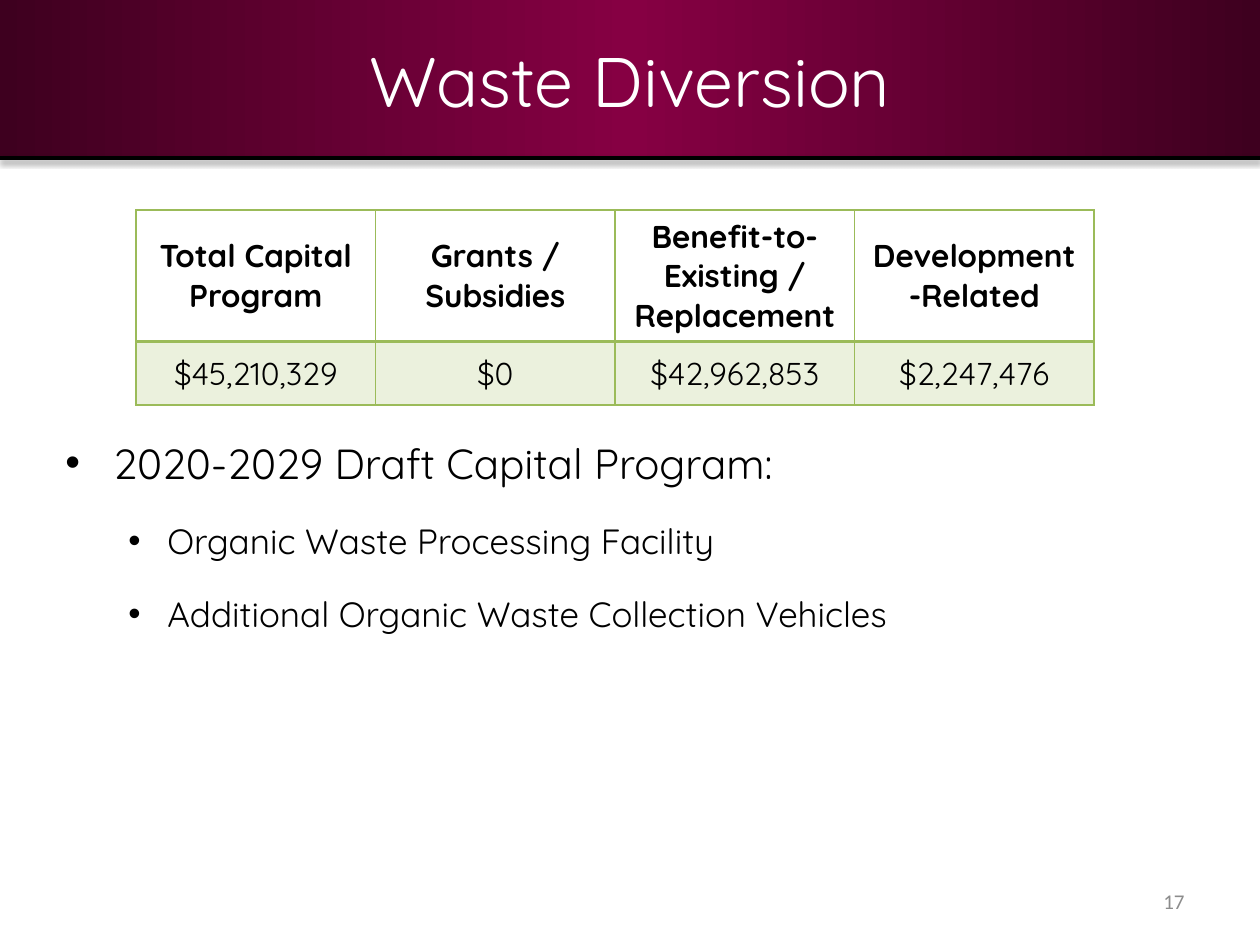
from dataclasses import dataclass

import lxml.etree
import pptx
import pptx.dml.color
import pptx.enum.shapes
import pptx.enum.text
import pptx.oxml
import pptx.oxml.ns
import pptx.util

EMU_PER_PX = 914400 / 126
ALIGN = pptx.enum.text.PP_ALIGN
MIDDLE = pptx.enum.text.MSO_ANCHOR.MIDDLE
NAMESPACE = pptx.oxml.ns.nsdecls("a")


@dataclass(frozen=True)
class Theme:
    font: str = "Quicksand"
    number_font: str = "Calibri"
    black: str = "000000"
    white: str = "FFFFFF"
    grey: str = "8C8C8C"
    green: str = "9BBB59"
    banner_edge: str = "3E001F"
    banner_centre: str = "860043"
    title_size: int = 40
    bullet_size: int = 24
    sub_bullet_size: int = 20
    table_size: int = 18
    number_size: int = 12


@dataclass(frozen=True)
class Box:
    left: int
    top: int
    width: int
    height: int

    def emu(self) -> tuple:
        return tuple(px(v) for v in (self.left, self.top, self.width, self.height))


@dataclass(frozen=True)
class Bullet:
    text: str
    level: int
    size: int
    margin: int
    hanging: int


@dataclass(frozen=True)
class Column:
    heading: str
    amount: str


THEME = Theme()
BANNER = Box(0, 0, 1260, 158)
TABLE = Box(136, 210, 958, 195)
BODY = Box(53, 431, 1144, 441)
PAGE_NUMBER = Box(903, 876, 294, 50)
ROW_HEIGHTS = (132, 63)

COLUMNS = (
    Column("Total Capital Program", "$45,210,329"),
    Column("Grants / Subsidies", "$0"),
    Column("Benefit-to-Existing / Replacement", "$42,962,853"),
    Column("Development-Related", "$2,247,476"),
)
BULLETS = (
    Bullet("2020-2029 Draft Capital Program:", 0, THEME.bullet_size, 48, 48),
    Bullet("Organic Waste Processing Facility", 1, THEME.sub_bullet_size, 102, 39),
    Bullet("Additional Organic Waste Collection Vehicles", 1, THEME.sub_bullet_size, 102, 39),
)


def px(length: float) -> pptx.util.Emu:
    return pptx.util.Emu(round(length * EMU_PER_PX))


def rgb(colour: str) -> pptx.dml.color.RGBColor:
    return pptx.dml.color.RGBColor.from_string(colour)


def format_runs(paragraph, size: int, colour: str = THEME.black,
                font: str = THEME.font, bold: bool = False) -> None:
    for run in paragraph.runs:
        run.font.name = font
        run.font.size = pptx.util.Pt(size)
        run.font.bold = bold
        run.font.color.rgb = rgb(colour)


def add_title(slide, text: str) -> None:
    title = slide.shapes.title
    title.left, title.top, title.width, title.height = BANNER.emu()
    frame = title.text_frame
    frame.text = text
    frame.vertical_anchor = MIDDLE
    frame.paragraphs[0].alignment = ALIGN.CENTER
    format_runs(frame.paragraphs[0], THEME.title_size, THEME.white)


def add_banner(slide) -> None:
    banner = slide.shapes.add_shape(
        pptx.enum.shapes.MSO_SHAPE.RECTANGLE, *BANNER.emu())
    banner.shadow.inherit = False
    banner.line.fill.background()
    edge, centre = THEME.banner_edge, THEME.banner_centre
    stops = "".join(
        f'<a:gs pos="{position}"><a:srgbClr val="{colour}"/></a:gs>'
        for position, colour in ((0, edge), (50000, centre), (100000, edge)))
    gradient = pptx.oxml.parse_xml(
        f'<a:gradFill {NAMESPACE} rotWithShape="1"><a:gsLst>{stops}</a:gsLst>'
        '<a:lin ang="0" scaled="0"/></a:gradFill>')
    banner.element.spPr.find(pptx.oxml.ns.qn("a:prstGeom")).addnext(gradient)
    # Keep the banner behind the title
    slide.shapes.title.element.addprevious(banner.element)


def add_banner_rule(slide) -> None:
    bottom = px(BANNER.height)
    rule = slide.shapes.add_connector(
        pptx.enum.shapes.MSO_CONNECTOR.STRAIGHT, 0, bottom, px(BANNER.width), bottom)
    rule.line.color.rgb = rgb(THEME.black)
    rule.line.width = pptx.util.Pt(2)
    rule.element.spPr.append(pptx.oxml.parse_xml(
        f'<a:effectLst {NAMESPACE}><a:outerShdw blurRad="40000" dist="20000" '
        f'dir="5400000" rotWithShape="0"><a:srgbClr val="{THEME.black}">'
        '<a:alpha val="38000"/></a:srgbClr></a:outerShdw></a:effectLst>'))


def set_borders(cell, widths: dict) -> None:
    properties = cell._tc.get_or_add_tcPr()
    for index, (side, points) in enumerate(widths.items()):
        properties.insert(index, pptx.oxml.parse_xml(
            f'<a:ln{side} {NAMESPACE} w="{points * 12700}"><a:solidFill>'
            f'<a:srgbClr val="{THEME.green}"/></a:solidFill></a:ln{side}>'))


def fill_cell(cell, text: str, heading: bool) -> None:
    cell.text = text
    cell.vertical_anchor = MIDDLE
    paragraph = cell.text_frame.paragraphs[0]
    paragraph.alignment = ALIGN.CENTER
    format_runs(paragraph, THEME.table_size, bold=heading)
    if heading:
        cell.fill.background()
    else:
        cell.fill.solid()
        cell.fill.fore_color.rgb = rgb(THEME.green)
        colour = cell._tc.tcPr.find(".//" + pptx.oxml.ns.qn("a:srgbClr"))
        lxml.etree.SubElement(colour, pptx.oxml.ns.qn("a:alpha"), val="20000")
    set_borders(cell, {"L": 1, "R": 1, "T": 1 if heading else 2, "B": 2 if heading else 1})


def add_cost_table(slide) -> None:
    table = slide.shapes.add_table(2, len(COLUMNS), *TABLE.emu()).table
    table.horz_banding = False
    for row, height in zip(table.rows, ROW_HEIGHTS):
        row.height = px(height)
    for index, column in enumerate(COLUMNS):
        table.columns[index].width = px(TABLE.width / len(COLUMNS))
        fill_cell(table.cell(0, index), column.heading, heading=True)
        fill_cell(table.cell(1, index), column.amount, heading=False)


def add_bullets(slide) -> None:
    frame = slide.shapes.add_textbox(*BODY.emu()).text_frame
    frame.word_wrap = True
    for index, bullet in enumerate(BULLETS):
        paragraph = frame.add_paragraph() if index else frame.paragraphs[0]
        paragraph.text = bullet.text
        paragraph.level = bullet.level
        paragraph.space_before = pptx.util.Pt(6 if index else 0)
        paragraph.space_after = pptx.util.Pt(12)
        properties = paragraph._p.get_or_add_pPr()
        properties.set("marL", str(px(bullet.margin)))
        properties.set("indent", str(-px(bullet.hanging)))
        for tag, name, value in (("a:buFont", "typeface", "Arial"), ("a:buChar", "char", "•")):
            lxml.etree.SubElement(properties, pptx.oxml.ns.qn(tag)).set(name, value)
        format_runs(paragraph, bullet.size)


def add_page_number(slide, text: str) -> None:
    frame = slide.shapes.add_textbox(*PAGE_NUMBER.emu()).text_frame
    frame.word_wrap = True
    frame.text = text
    frame.vertical_anchor = MIDDLE
    frame.paragraphs[0].alignment = ALIGN.RIGHT
    format_runs(frame.paragraphs[0], THEME.number_size, THEME.grey, THEME.number_font)


def main() -> None:
    presentation = pptx.Presentation()
    presentation.slide_width, presentation.slide_height = px(1260), px(945)
    slide = presentation.slides.add_slide(presentation.slide_layouts[5])
    add_title(slide, "Waste Diversion")
    add_banner(slide)
    add_banner_rule(slide)
    add_cost_table(slide)
    add_bullets(slide)
    add_page_number(slide, "17")
    presentation.save("out.pptx")


if __name__ == "__main__":
    main()
